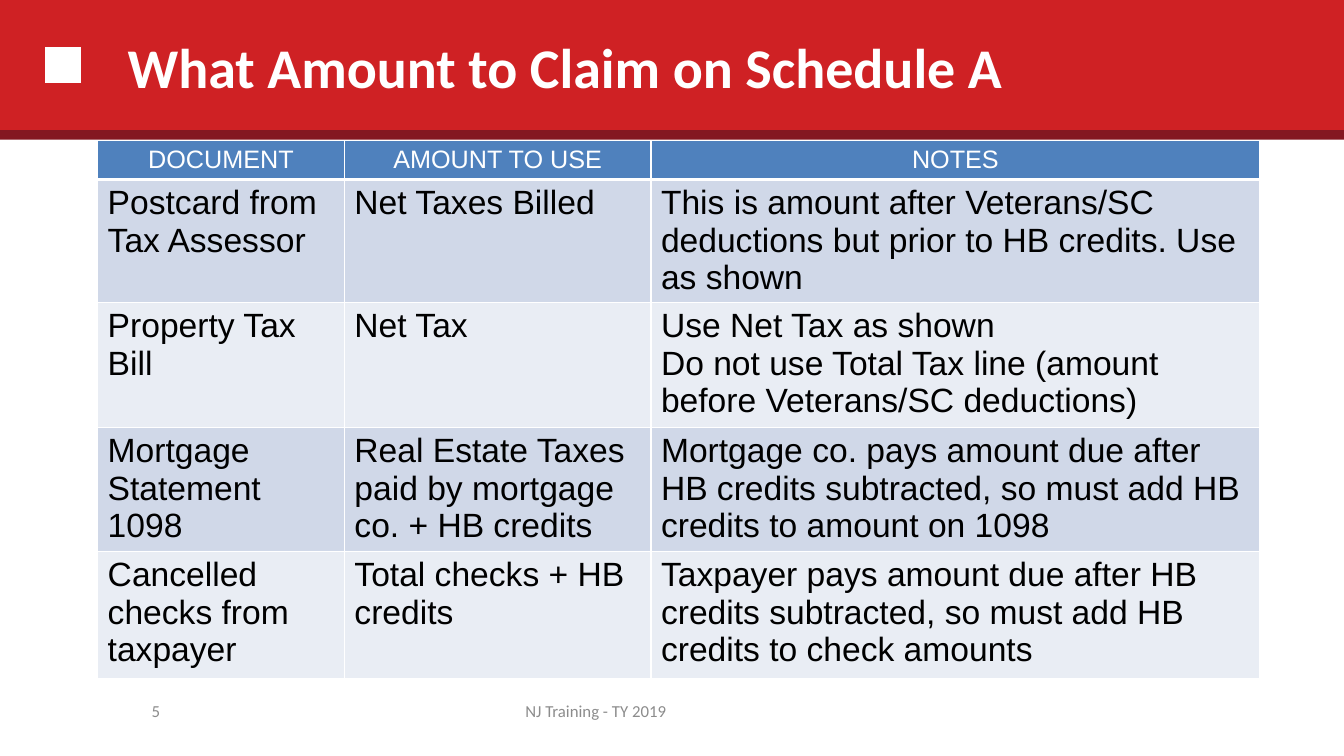
"""Build the slide on which property tax amount to claim on Schedule A."""
from dataclasses import dataclass

from lxml import etree
from pptx import Presentation
from pptx.dml.color import RGBColor
from pptx.enum.shapes import MSO_SHAPE
from pptx.enum.text import MSO_ANCHOR, PP_ALIGN
from pptx.oxml.ns import qn
from pptx.util import Pt

PX = 9525
RECT = MSO_SHAPE.RECTANGLE
MIDDLE = MSO_ANCHOR.MIDDLE
LEFT, CENTER, RIGHT = PP_ALIGN.LEFT, PP_ALIGN.CENTER, PP_ALIGN.RIGHT

RED = RGBColor(0xCF, 0x21, 0x24)
DARK_RED = RGBColor(0x84, 0x17, 0x21)
WHITE = RGBColor(0xFF, 0xFF, 0xFF)
BLACK = RGBColor(0x00, 0x00, 0x00)
GRAY = RGBColor(0x8C, 0x8C, 0x8C)
BLUE = RGBColor(0x4F, 0x81, 0xBD)
BANDS = (RGBColor(0xD0, 0xD8, 0xE8), RGBColor(0xE9, 0xED, 0xF4))


@dataclass(frozen=True)
class Box:
    """A position and size in px."""
    x: int
    y: int
    w: int
    h: int

    def emu(self) -> tuple[int, int, int, int]:
        """Return left, top, width and height in EMU."""
        return self.x * PX, self.y * PX, self.w * PX, self.h * PX


@dataclass(frozen=True)
class Bar:
    """A filled rectangle of the header band."""
    box: Box
    color: RGBColor


@dataclass(frozen=True)
class Footer:
    """A line of small text below the table."""
    text: str
    box: Box
    align: PP_ALIGN


BARS = (
    Bar(Box(0, -1, 1280, 128), RED),
    Bar(Box(43, 45, 34, 34), WHITE),
    Bar(Box(0, 124, 1280, 9), DARK_RED),
)
FOOTERS = (
    Footer("NJ Training - TY 2019", Box(365, 658, 405, 38), CENTER),
    Footer("5", Box(64, 658, 98, 38), RIGHT),
)
TITLE_BOX = Box(112, 3, 1023, 120)
COLS = (235, 292, 580)
ROWS = (37, 117, 119, 118, 121)
TABLE_BOX = Box(93, 134, sum(COLS), sum(ROWS))
CELLS = (
    ("DOCUMENT", "AMOUNT TO USE", "NOTES"),
    ("Postcard from Tax Assessor", "Net Taxes Billed",
     "This is amount after Veterans/SC deductions but prior to HB credits. "
     "Use as shown"),
    ("Property Tax Bill", "Net Tax",
     "Use Net Tax as shown\n"
     "Do not use Total Tax line (amount before Veterans/SC deductions)"),
    ("Mortgage Statement 1098",
     "Real Estate Taxes paid by mortgage co. + HB credits",
     "Mortgage co. pays amount due after HB credits subtracted, "
     "so must add HB credits to amount on 1098"),
    ("Cancelled checks from taxpayer", "Total checks + HB credits",
     "Taxpayer pays amount due after HB credits subtracted, "
     "so must add HB credits to check amounts"),
)


def write(tf, text: str, *, size: int, color: RGBColor, font: str = "Arial",
          bold: bool = False, align: PP_ALIGN = LEFT) -> None:
    """Fill a text frame with one formatted paragraph per line of text."""
    tf.text = text
    for p in tf.paragraphs:
        p.alignment = align
        for r in p.runs:
            r.font.name = font
            r.font.size = Pt(size)
            r.font.bold = bold
            r.font.color.rgb = color


def add_bar(s, bar: Bar):
    """Draw a header rectangle and return it."""
    sp = s.shapes.add_shape(RECT, *bar.box.emu())
    sp.shadow.inherit = False
    sp.fill.solid()
    sp.fill.fore_color.rgb = bar.color
    sp.line.fill.background()
    return sp


def add_footer(s, footer: Footer):
    """Draw a footer text and return its box."""
    sp = s.shapes.add_textbox(*footer.box.emu())
    tf = sp.text_frame
    tf.word_wrap = True
    tf.vertical_anchor = MIDDLE
    write(tf, footer.text, size=12, color=GRAY, font="Calibri",
          align=footer.align)
    return sp


def place_title(s, text: str, after) -> None:
    """Format the title placeholder and lift it above the given shape."""
    sp = s.shapes.title
    sp.left, sp.top, sp.width, sp.height = TITLE_BOX.emu()
    sp.text_frame.vertical_anchor = MIDDLE
    write(sp.text_frame, text, size=40, color=WHITE, font="Calibri", bold=True)
    after.element.addnext(sp.element)


def set_borders(cell, bottom: int) -> None:
    """Give a cell white borders, with the bottom one as wide as asked."""
    tc_pr = cell._tc.get_or_add_tcPr()
    for side, width in (("L", 1), ("R", 1), ("T", 1), ("B", bottom)):
        ln = etree.SubElement(tc_pr, qn(f"a:ln{side}"), w=str(Pt(width)))
        fill = etree.SubElement(ln, qn("a:solidFill"))
        etree.SubElement(fill, qn("a:srgbClr"), val=str(WHITE))


def add_claims_table(s) -> None:
    """Draw the table of documents, amounts and notes."""
    table = s.shapes.add_table(len(ROWS), len(COLS), *TABLE_BOX.emu()).table
    for col, width in zip(table.columns, COLS):
        col.width = width * PX
    for i, (row, height) in enumerate(zip(table.rows, ROWS)):
        row.height = height * PX
        header = i == 0
        for cell, text in zip(row.cells, CELLS[i]):
            set_borders(cell, 3 if header else 1)
            cell.fill.solid()
            cell.fill.fore_color.rgb = BLUE if header else BANDS[(i - 1) % 2]
            write(cell.text_frame, text, size=18 if header else 24,
                  color=WHITE if header else BLACK,
                  align=CENTER if header else LEFT)


def main() -> None:
    """Build and save the presentation."""
    prs = Presentation()
    prs.slide_width, prs.slide_height = 1280 * PX, 720 * PX
    s = prs.slides.add_slide(prs.slide_layouts[5])
    for bar in BARS:
        add_bar(s, bar)
    for footer in FOOTERS:
        sp = add_footer(s, footer)
    place_title(s, "What Amount to Claim on Schedule A", sp)
    add_claims_table(s)
    prs.save("out.pptx")


if __name__ == "__main__":
    main()
